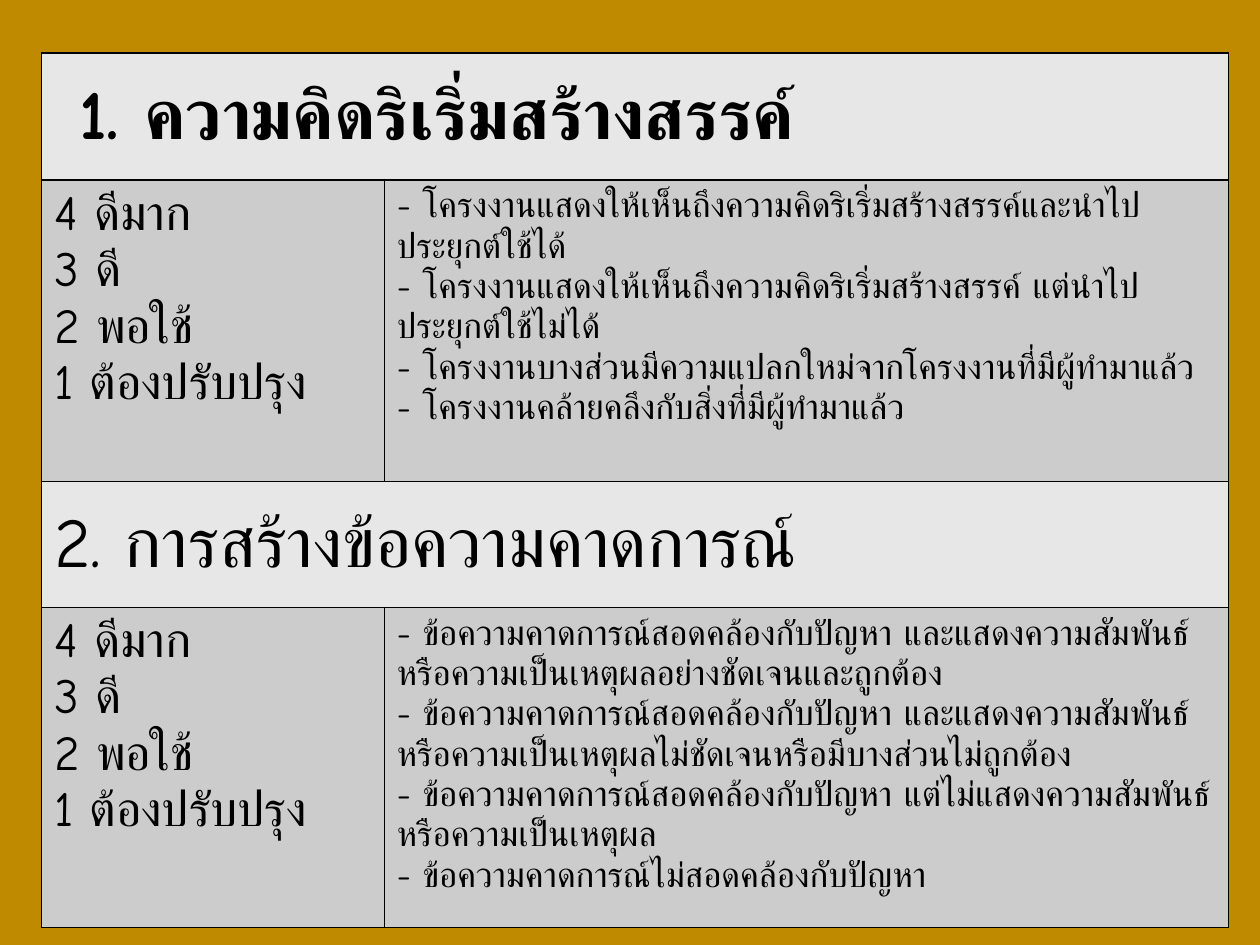
from pptx import Presentation, util as u
from pptx.dml.color import RGBColor
from pptx.enum import text
from pptx.oxml import parse_xml
from pptx.oxml.ns import nsdecls

FONT = "Comic Neue"
COLUMNS = [2.72, 6.7]
ROWS = [1.01, 2.39, 1.0, 2.54]
LEFT, TOP = 0.33, 0.42
HEADING_FILL, BODY_FILL = "E7E7E7", "CCCCCC"

LEVELS = ["4 ดีมาก", "3 ดี", "2 พอใช้", "1 ต้องปรับปรุง"]
CRITERIA = [
    (" 1. ความคิดริเริ่มสร้างสรรค์", True, [
        "- โครงงานแสดงให้เห็นถึงความคิดริเริ่มสร้างสรรค์และนำไปประยุกต์ใช้ได้",
        "- โครงงานแสดงให้เห็นถึงความคิดริเริ่มสร้างสรรค์ แต่นำไปประยุกต์ใช้ไม่ได้",
        "- โครงงานบางส่วนมีความแปลกใหม่จากโครงงานที่มีผู้ทำมาแล้ว",
        "- โครงงานคล้ายคลึงกับสิ่งที่มีผู้ทำมาแล้ว",
    ]),
    ("2. การสร้างข้อความคาดการณ์", False, [
        "- ข้อความคาดการณ์สอดคล้องกับปัญหา และแสดงความสัมพันธ์ หรือความเป็นเหตุผลอย่างชัดเจนและถูกต้อง",
        "- ข้อความคาดการณ์สอดคล้องกับปัญหา และแสดงความสัมพันธ์ หรือความเป็นเหตุผลไม่ชัดเจนหรือมีบางส่วนไม่ถูกต้อง",
        "- ข้อความคาดการณ์สอดคล้องกับปัญหา แต่ไม่แสดงความสัมพันธ์ หรือความเป็นเหตุผล",
        "- ข้อความคาดการณ์ไม่สอดคล้องกับปัญหา",
    ]),
]


def color(value):
    return RGBColor.from_string(value)


def write(cell, lines, size, fill, bold=False, anchor=text.MSO_ANCHOR.TOP):
    """Put one paragraph per line into the cell, in Latin and Thai fonts."""
    cell.fill.solid()
    cell.fill.fore_color.rgb = color(fill)
    cell.vertical_anchor = anchor
    frame = cell.text_frame
    for index, line in enumerate(lines):
        para = frame.add_paragraph() if index else frame.paragraphs[0]
        span = para.add_run()
        span.text = line
        span.font.size = u.Pt(size)
        span.font.bold = bold
        span.font.name = FONT
        span.font.color.rgb = color("000000")
        span.font._element.append(
            parse_xml(f'<a:cs {nsdecls("a")} typeface="{FONT}"/>'))


deck = Presentation()
deck.slide_width, deck.slide_height = u.Inches(10), u.Inches(7.5)
page = deck.slides.add_slide(deck.slide_layouts[6])
page.background.fill.solid()
page.background.fill.fore_color.rgb = color("BF8A00")

table = page.shapes.add_table(
    len(ROWS), len(COLUMNS), u.Inches(LEFT), u.Inches(TOP),
    u.Inches(sum(COLUMNS)), u.Inches(sum(ROWS))).table
table.first_row = table.horz_banding = False
for column, width in zip(table.columns, COLUMNS):
    column.width = u.Inches(width)
for row, height in zip(table.rows, ROWS):
    row.height = u.Inches(height)

# Borders come first because a cell's fill must follow them in the XML.
for cell in table.iter_cells():
    borders = cell._tc.get_or_add_tcPr()
    for side in ("lnL", "lnR", "lnT", "lnB"):
        borders.append(parse_xml(
            f'<a:{side} {nsdecls("a")} w="12700"><a:solidFill>'
            f'<a:srgbClr val="000000"/></a:solidFill></a:{side}>'))

for number, (heading, bold, descriptions) in enumerate(CRITERIA):
    top = 2 * number
    table.cell(top, 0).merge(table.cell(top, 1))
    write(table.cell(top, 0), [heading], 40, HEADING_FILL, bold=bold,
          anchor=text.MSO_ANCHOR.MIDDLE)
    write(table.cell(top + 1, 0), LEVELS, 28, BODY_FILL)
    write(table.cell(top + 1, 1), descriptions, 20, BODY_FILL)

deck.save("out.pptx")
